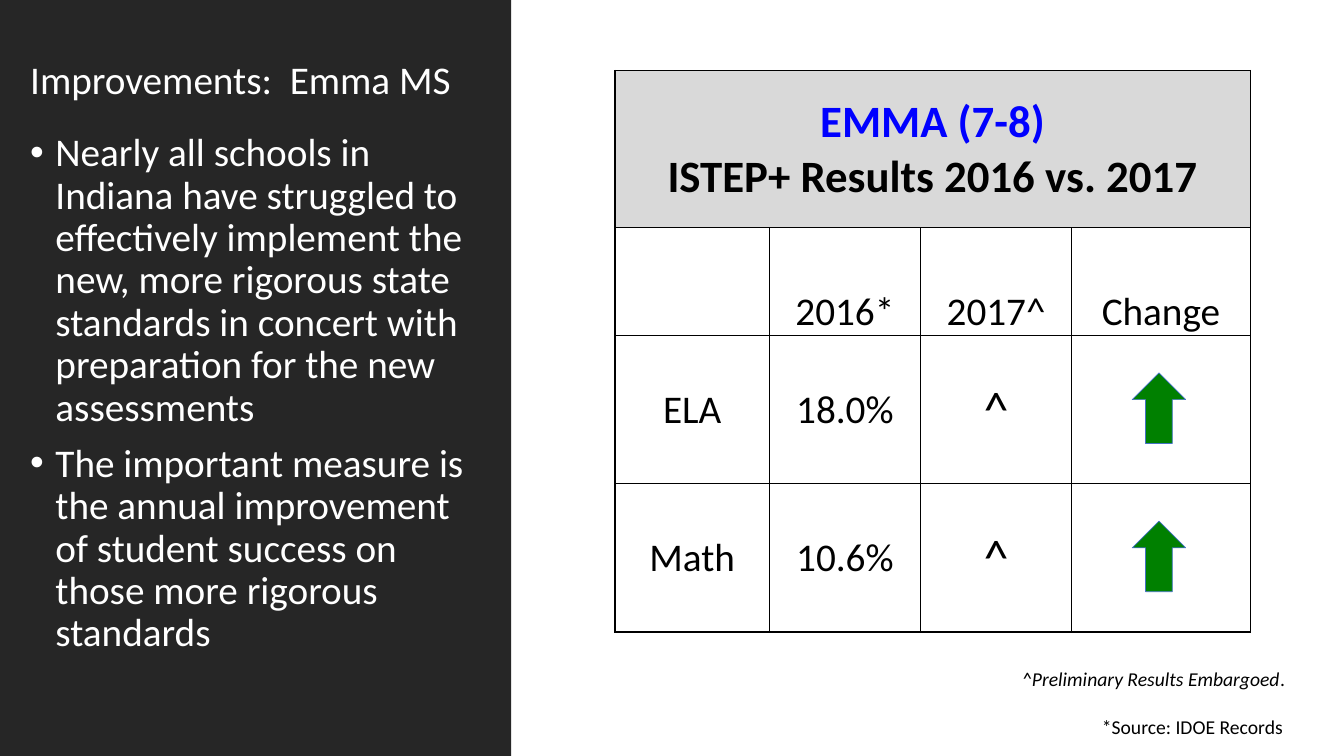
from dataclasses import dataclass

from lxml import etree
from pptx import Presentation
from pptx import util as u
from pptx.dml.color import RGBColor
from pptx.enum import shapes, text
from pptx.oxml import ns

FONT = "Calibri"
CHARCOAL = RGBColor(0x26, 0x26, 0x26)
WHITE = RGBColor(0xFF, 0xFF, 0xFF)
BLACK = RGBColor(0, 0, 0)
BLUE = RGBColor(0, 0, 0xFF)
GREY = RGBColor(0xD9, 0xD9, 0xD9)
GREEN = RGBColor(0, 0x80, 0)
ARROW_EDGE = RGBColor(0x44, 0x72, 0xC4)

COLUMN_WIDTHS = (1.53, 1.5, 1.5, 1.77)
ROW_HEIGHTS = (1.56, 1.07, 1.47, 1.47)
TABLE_LEFT, TABLE_TOP = 6.1, 0.7
ARROW_TOP, ARROW_WIDTH, ARROW_HEIGHT = 3.7, 0.53, 0.7

BULLETS = (
    "Nearly all schools in Indiana have struggled to effectively implement the new, "
    "more rigorous state standards in concert with preparation for the new assessments",
    "The important measure is the annual improvement of student success on those "
    "more rigorous standards",
)


@dataclass(frozen=True)
class Run:
    text: str
    size: float = 28
    color: RGBColor = BLACK
    bold: bool = False
    italic: bool = False


@dataclass(frozen=True)
class Footnote:
    left: float
    top: float
    width: float
    runs: tuple[Run, ...]


HEADING = (
    Run("EMMA (7-8)", 32, BLUE, bold=True),
    Run("ISTEP+ Results 2016 vs. 2017", 32, bold=True),
)
RESULT_ROWS = (
    (None, Run("2016*"), Run("2017^"), Run("Change")),
    (Run("ELA"), Run("18.0%"), Run("^", 36), None),
    (Run("Math"), Run("10.6%"), Run("^", 36), None),
)
FOOTNOTES = (
    Footnote(10.83, 7.04, 2.1, (Run("*Source: IDOE Records", 14),)),
    Footnote(10.04, 6.57, 2.89,
             (Run("^Preliminary Results Embargoed", 14, italic=True), Run(".", 14))),
)


def add_run(paragraph, content: Run) -> None:
    run = paragraph.add_run()
    run.text = content.text
    run.font.name = FONT
    run.font.size = u.Pt(content.size)
    run.font.bold = content.bold
    run.font.italic = content.italic
    run.font.color.rgb = content.color


def next_paragraph(frame, index: int):
    return frame.add_paragraph() if index else frame.paragraphs[0]


def place(shape, left: float, top: float, width: float, height: float) -> None:
    shape.left, shape.top = u.Inches(left), u.Inches(top)
    shape.width, shape.height = u.Inches(width), u.Inches(height)


def add_filled_shape(slide, kind, left: float, top: float, width: float,
                     height: float, color: RGBColor):
    shape = slide.shapes.add_shape(
        kind, u.Inches(left), u.Inches(top), u.Inches(width), u.Inches(height))
    shape.shadow.inherit = False
    shape.fill.solid()
    shape.fill.fore_color.rgb = color
    shape.line.fill.background()
    return shape


def fill_title(title) -> None:
    place(title, 0.2, 0.29, 4.87, 1.05)
    frame = title.text_frame
    frame.auto_size = text.MSO_AUTO_SIZE.NONE
    frame.vertical_anchor = text.MSO_ANCHOR.MIDDLE
    paragraph = frame.paragraphs[0]
    paragraph.alignment = text.PP_ALIGN.LEFT
    paragraph.line_spacing = 0.9
    add_run(paragraph, Run("Improvements:  Emma MS", color=WHITE))


def fill_bullets(body) -> None:
    place(body, 0.2, 1.27, 4.52, 5.79)
    frame = body.text_frame
    frame.auto_size = text.MSO_AUTO_SIZE.NONE
    for index, bullet in enumerate(BULLETS):
        paragraph = next_paragraph(frame, index)
        paragraph.line_spacing = 0.9
        paragraph.space_before = u.Pt(10)
        add_run(paragraph, Run(bullet, color=WHITE))
        properties = paragraph._p.get_or_add_pPr()
        properties.set("marL", str(u.Inches(0.25)))
        properties.set("indent", str(-u.Inches(0.25)))
        etree.SubElement(properties, ns.qn("a:buFont")).set("typeface", "Arial")
        etree.SubElement(properties, ns.qn("a:buChar")).set("char", "•")


def add_borders(cell) -> None:
    properties = cell._tc.get_or_add_tcPr()
    for position, side in enumerate(("lnL", "lnR", "lnT", "lnB")):
        line = etree.Element(ns.qn(f"a:{side}"), w=str(u.Pt(1)))
        fill = etree.SubElement(line, ns.qn("a:solidFill"))
        etree.SubElement(fill, ns.qn("a:srgbClr")).set("val", str(BLACK))
        properties.insert(position, line)


def fill_cell(cell, runs: tuple[Run, ...], anchor) -> None:
    cell.vertical_anchor = anchor
    cell.margin_left = cell.margin_right = cell.margin_top = u.Inches(0.01)
    cell.margin_bottom = 0
    for index, run in enumerate(runs):
        paragraph = next_paragraph(cell.text_frame, index)
        paragraph.alignment = text.PP_ALIGN.CENTER
        add_run(paragraph, run)


def add_results_table(slide) -> None:
    table = slide.shapes.add_table(
        len(ROW_HEIGHTS), len(COLUMN_WIDTHS), u.Inches(TABLE_LEFT), u.Inches(TABLE_TOP),
        u.Inches(sum(COLUMN_WIDTHS)), u.Inches(sum(ROW_HEIGHTS))).table
    table.first_row = table.horz_banding = False
    for column, width in zip(table.columns, COLUMN_WIDTHS):
        column.width = u.Inches(width)
    for row, height in zip(table.rows, ROW_HEIGHTS):
        row.height = u.Inches(height)
    for cell in table.iter_cells():
        cell.fill.background()
        add_borders(cell)

    heading = table.cell(0, 0)
    heading.merge(table.cell(0, len(COLUMN_WIDTHS) - 1))
    heading.fill.solid()
    heading.fill.fore_color.rgb = GREY
    fill_cell(heading, HEADING, text.MSO_ANCHOR.MIDDLE)
    for row_index, results in enumerate(RESULT_ROWS, start=1):
        anchor = text.MSO_ANCHOR.BOTTOM if row_index == 1 else text.MSO_ANCHOR.MIDDLE
        for column_index, run in enumerate(results):
            if run:
                fill_cell(table.cell(row_index, column_index), (run,), anchor)


def add_change_arrows(slide) -> None:
    for index in range(2):
        arrow = add_filled_shape(
            slide, shapes.MSO_SHAPE.UP_ARROW, 11.23, ARROW_TOP + index * ROW_HEIGHTS[-1],
            ARROW_WIDTH, ARROW_HEIGHT, GREEN)
        arrow.line.color.rgb = ARROW_EDGE
        arrow.line.width = u.Pt(0.5)


def add_footnote(slide, footnote: Footnote) -> None:
    box = slide.shapes.add_textbox(
        u.Inches(footnote.left), u.Inches(footnote.top),
        u.Inches(footnote.width), u.Inches(0.34))
    box.text_frame.word_wrap = False
    box.text_frame.auto_size = text.MSO_AUTO_SIZE.SHAPE_TO_FIT_TEXT
    for run in footnote.runs:
        add_run(box.text_frame.paragraphs[0], run)


def main() -> None:
    presentation = Presentation()
    presentation.slide_width = u.Inches(13.33)
    presentation.slide_height = u.Inches(7.5)
    slide = presentation.slides.add_slide(presentation.slide_layouts[1])
    title, body = slide.shapes.title, slide.placeholders[1]
    panel = add_filled_shape(slide, shapes.MSO_SHAPE.RECTANGLE, 0, 0, 5.07, 7.5, CHARCOAL)
    title.element.addprevious(panel.element)
    fill_title(title)
    fill_bullets(body)
    add_results_table(slide)
    add_change_arrows(slide)
    for footnote in FOOTNOTES:
        add_footnote(slide, footnote)
    presentation.save("out.pptx")


if __name__ == "__main__":
    main()
